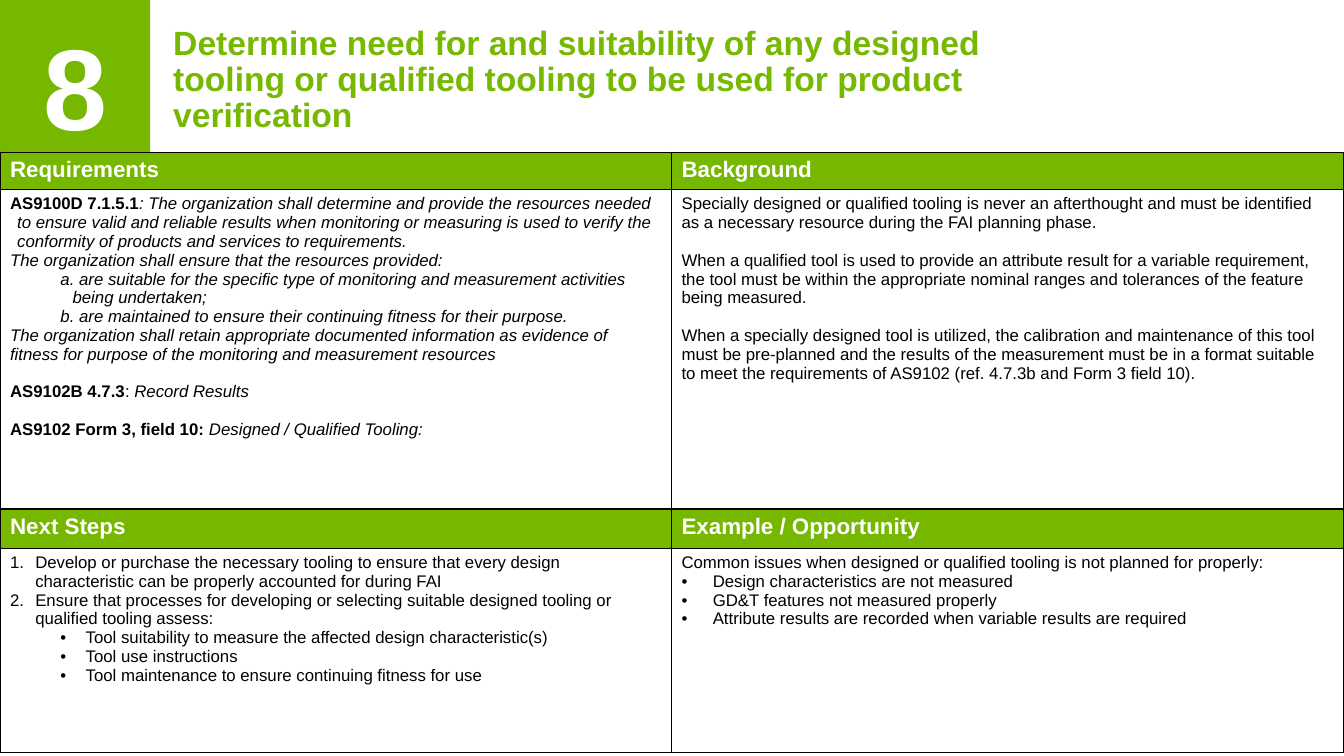
"""Build the slide on step 8: designed and qualified tooling."""
from lxml import etree
from pptx import Presentation, dml
from pptx import util as u
from pptx.dml import color
from pptx.enum import shapes, text
from pptx.oxml import ns

GREEN, WHITE, BLACK = "76B800", "FFFFFF", "000000"


def rgb(code):
    return color.RGBColor.from_string(code)


def add_run(par, words, size, code, style=""):
    run = par.add_run()
    run.text = words
    font = run.font
    font.name, font.size = "Arial", u.Pt(size)
    font.color.rgb = rgb(code)
    font.bold, font.italic = "b" in style, "i" in style


deck = Presentation()
deck.slide_width, deck.slide_height = u.Inches(13.33), u.Inches(7.5)
slide = deck.slides.add_slide(deck.slide_layouts[6])

title = slide.shapes.add_textbox(
    u.Inches(1.62), u.Inches(0.19), u.Inches(9.24), u.Inches(1.22)).text_frame
title.word_wrap = True
title.vertical_anchor = text.MSO_ANCHOR.MIDDLE
title.paragraphs[0].line_spacing = 0.9
add_run(title.paragraphs[0],
        "Determine need for and suitability of any designed tooling or "
        "qualified tooling to be used for product verification",
        24, "77B800", "b")

badge = slide.shapes.add_shape(
    shapes.MSO_SHAPE.RECTANGLE, 0, 0, u.Inches(1.49), u.Inches(1.51))
badge.shadow.inherit = False
badge.fill.solid()
badge.fill.fore_color.rgb = rgb(GREEN)
badge.line.fill.background()
frame = badge.text_frame
frame.vertical_anchor = text.MSO_ANCHOR.TOP
frame.margin_top, frame.margin_bottom = u.Inches(0.16), 0
frame.paragraphs[0].alignment = text.PP_ALIGN.CENTER
add_run(frame.paragraphs[0], "8", 82, WHITE, "b")

# Each paragraph: left margin, hanging indent, bullet, space before, runs
needs = [
    (0.07, 0.07, "", 0, [
        ("AS9100D 7.1.5.1", "b"),
        (": The organization shall determine and provide the resources needed "
         "to ensure valid and reliable results when monitoring or measuring is "
         "used to verify the conformity of products and services to "
         "requirements.", "i")]),
    (0.07, 0.07, "", 0, [
        ("The organization shall ensure that the resources provided:", "i")]),
    (0.62, 0.12, "", 0, [
        ("a. are suitable for the specific type of monitoring and measurement "
         "activities being undertaken;", "i")]),
    (0.62, 0.12, "", 0, [
        ("b. are maintained to ensure their continuing fitness for their "
         "purpose.", "i")]),
    (0, 0, "", 0, [
        ("The organization shall retain appropriate documented information as "
         "evidence of fitness for purpose of the monitoring and measurement "
         "resources", "i")]),
    (0.12, 0.12, "", 13.5, [
        ("AS9102B 4.7.3", "b"), (": ", ""), ("Record Results", "i")]),
    (0.12, 0.12, "", 13.5, [
        ("AS9102 Form 3, field 10: ", "b"),
        ("Designed / Qualified Tooling:", "i")]),
]
back = [
    (0, 0, "", 0, [
        ("Specially designed or qualified tooling is never an afterthought and "
         "must be identified as a necessary resource during the FAI planning "
         "phase.", "")]),
    (0, 0, "", 13.5, [
        ("When a qualified tool is used to provide an attribute result for a "
         "variable requirement, the tool must be within the appropriate "
         "nominal ranges and tolerances of the feature being measured.", "")]),
    (0, 0, "", 13.5, [
        ("When a specially designed tool is utilized, the calibration and "
         "maintenance of this tool must be pre-planned and the results of the "
         "measurement must be in a format suitable to meet the requirements of "
         "AS9102 (ref. 4.7.3b and Form 3 field 10).", "")]),
]
steps = [(0.25, 0.25, "1.", 0, [(line, "")]) for line in (
    "Develop or purchase the necessary tooling to ensure that every design "
    "characteristic can be properly accounted for during FAI",
    "Ensure that processes for developing or selecting suitable designed "
    "tooling or qualified tooling assess:")]
steps += [(0.75, 0.25, "•", 0, [(line, "")]) for line in (
    "Tool suitability to measure the affected design characteristic(s)",
    "Tool use instructions",
    "Tool maintenance to ensure continuing fitness for use")]
cases = [(0, 0, "", 0, [
    ("Common issues when designed or qualified tooling is not planned for "
     "properly:", "")])]
cases += [(0.31, 0.31, "•", 0, [(line, "")]) for line in (
    "Design characteristics are not measured",
    "GD&T features not measured properly",
    "Attribute results are recorded when variable results are required")]
heads = [[(0, 0, "", 0, [(name, "b")])] for name in (
    "Requirements", "Background", "Next Steps", "Example / Opportunity")]
rows = [heads[:2], [needs, back], heads[2:], [steps, cases]]

table = slide.shapes.add_table(
    4, 2, 0, u.Inches(1.51), u.Inches(13.33), u.Inches(5.96)).table
table.first_row = table.horz_banding = False
for col, wide in zip(table.columns, (6.66, 6.67)):
    col.width = u.Inches(wide)
for row, high in zip(table.rows, (0.37, 3.17, 0.39, 2.03)):
    row.height = u.Inches(high)

for r, row in enumerate(rows):
    head = r % 2 == 0
    size, ink = (16, WHITE) if head else (12, BLACK)
    for c, pars in enumerate(row):
        cell = table.cell(r, c)
        props = cell._tc.get_or_add_tcPr()
        for side in ("lnL", "lnR", "lnT", "lnB"):
            edge = etree.SubElement(props, ns.qn("a:" + side), w="12700")
            fill = etree.SubElement(edge, ns.qn("a:solidFill"))
            etree.SubElement(fill, ns.qn("a:srgbClr"), val=BLACK)
        if head:
            cell.fill.solid()
            cell.fill.fore_color.rgb = rgb(GREEN)
        else:
            cell.fill.background()
        for n, (left, hang, mark, gap, runs) in enumerate(pars):
            frame = cell.text_frame
            par = frame.add_paragraph() if n else frame.paragraphs[0]
            par.level = int(left > 0.5)
            if gap:
                par.space_before = u.Pt(gap)
            prop = par._p.get_or_add_pPr()
            prop.set("marL", str(u.Inches(left)))
            prop.set("indent", str(-u.Inches(hang)))
            if mark == "1.":
                etree.SubElement(prop, ns.qn("a:buFont"), typeface="+mj-lt")
                etree.SubElement(prop, ns.qn("a:buAutoNum"), type="arabicPeriod")
            elif mark:
                etree.SubElement(prop, ns.qn("a:buFont"), typeface="Arial")
                etree.SubElement(prop, ns.qn("a:buChar"), char=mark)
            else:
                etree.SubElement(prop, ns.qn("a:buNone"))
            for words, style in runs:
                add_run(par, words, size, ink, style)

deck.save("out.pptx")
